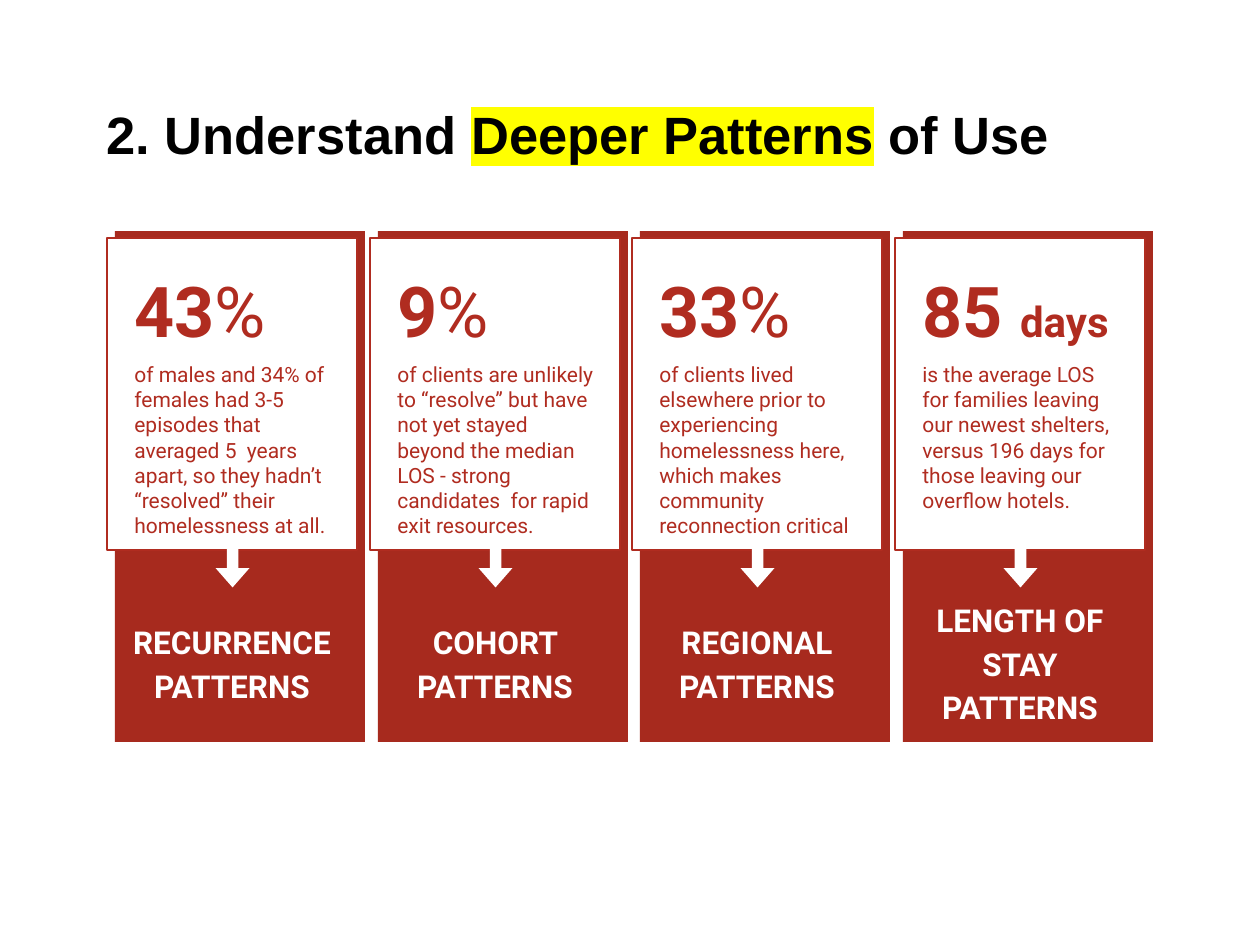
from lxml import etree
from pptx import Presentation
from pptx.dml.color import RGBColor
from pptx.enum import shapes, text
from pptx.oxml.ns import qn
from pptx.util import Emu, Pt

SCALE = 914400 // 126
DARK, RED, WHITE = "A72A1E", "B02C20", "FFFFFF"
BODY = {"size": Pt(12), "name": "Roboto", "bold": False}
FIGURE = {"size": Pt(40), "name": "Roboto", "bold": True}
UNIT = {**FIGURE, "bold": False}
DAYS = {**FIGURE, "size": Pt(24)}
LABEL = {**FIGURE, "size": Pt(18)}
TITLE = {"size": Pt(30), "name": "Arial", "bold": True}

CARDS = [
    ("43", "%", UNIT, "RECURRENCE PATTERNS", 228,
     "of males and 34% of females had 3-5 episodes that averaged 5  years apart, "
     "so they hadn’t “resolved” their homelessness at all."),
    ("9", "%", UNIT, "COHORT PATTERNS", 229,
     "of clients are unlikely to “resolve” but have not yet stayed beyond the median LOS "
     "- strong candidates  for rapid exit resources."),
    ("33", "%", UNIT, "REGIONAL PATTERNS", 202,
     "of clients lived elsewhere prior to experiencing homelessness here, "
     "which makes community reconnection critical"),
    ("85 ", "days", DAYS, "LENGTH OF STAY PATTERNS", 179,
     "is the average LOS for families leaving our newest shelters, "
     "versus 196 days for those leaving our overflow hotels."),
]


def px(length):
    return Emu(length * SCALE)


def color(value):
    return RGBColor.from_string(value)


def apply(target, values):
    for name, value in values.items():
        setattr(target, name, value)


class Painter:
    """Draws styled elements on the current slide."""

    def __init__(self, page):
        self.page = page
        self.target = page.shapes

    def group(self):
        self.target = self.page.shapes.add_group_shape().shapes

    def spans(self, para, parts, ink):
        for words, style, *marker in parts:
            span = para.add_run()
            span.text = words
            span.font.color.rgb = color(ink)
            apply(span.font, style)
            if marker:
                highlight = etree.Element(qn("a:highlight"))
                etree.SubElement(highlight, qn("a:srgbClr"), val=marker[0])
                span.font.fill  # noqa
                span._r.rPr.find(qn("a:latin")).addprevious(highlight)

    def title(self, at, parts):
        box = self.page.shapes.title
        apply(box, dict(zip(("left", "top", "width", "height"), map(px, at))))
        apply(box.text_frame, {
            "word_wrap": True, "auto_size": text.MSO_AUTO_SIZE.NONE,
            "vertical_anchor": text.MSO_ANCHOR.TOP, "margin_top": px(11)})
        para = box.text_frame.paragraphs[0]
        para.alignment = text.PP_ALIGN.LEFT
        self.spans(para, parts, "000000")

    def shape(self, kind, at, fill, line=None):
        shape = self.target.add_shape(kind, *map(px, at))
        shape.shadow.inherit = False
        shape.fill.solid()
        shape.fill.fore_color.rgb = color(fill)
        if line:
            shape.line.color.rgb = color(line)
            shape.line.width = Pt(1.5)
        else:
            shape.line.fill.background()
        return shape

    def arrow(self, at):
        arrow = self.shape(shapes.MSO_SHAPE.RIGHT_ARROW, at, WHITE)
        arrow.rotation = 90
        arrow.adjustments[0], arrow.adjustments[1] = 0.34, 0.57

    def words(self, at, parts, ink, frame_style=None, para_style=None):
        frame = self.target.add_textbox(*map(px, at)).text_frame
        margins = dict.fromkeys(
            ("margin_left", "margin_top", "margin_right", "margin_bottom"), Pt(7.2))
        apply(frame, {"word_wrap": True, **margins, **(frame_style or {})})
        apply(frame.paragraphs[0], para_style or {})
        self.spans(frame.paragraphs[0], parts, ink)

    def card(self, left, figure, unit, unit_style, label, height, body):
        self.group()
        rectangle = shapes.MSO_SHAPE.RECTANGLE
        self.shape(rectangle, (left + 8, 231, 250, 511), DARK)
        self.shape(rectangle, (left, 238, 250, 312), WHITE, RED)
        self.words((left + 15, 349, 224, height), [(body, BODY)], RED)
        self.words((left + 15, 255, 224, 84),
                   [(figure, FIGURE), (unit, unit_style)], RED)
        self.arrow((left + 101, 546, 49, 34))
        self.words((left, 593, 250, 136), [(label, LABEL)], WHITE,
                   {"vertical_anchor": text.MSO_ANCHOR.MIDDLE},
                   {"alignment": text.PP_ALIGN.CENTER, "line_spacing": 1.15})


def main():
    deck = Presentation()
    deck.slide_width, deck.slide_height = px(1260), px(945)
    painter = Painter(deck.slides.add_slide(deck.slide_layouts[5]))
    painter.title((94, 91, 1072, 55), [
        ("2. Understand ", TITLE), ("Deeper Patterns", TITLE, "FFFF00"), (" of Use", TITLE)])
    for index, card in enumerate(CARDS):
        painter.card((215 + 525 * index) // 2, *card)
    deck.save("out.pptx")


if __name__ == "__main__":
    main()
